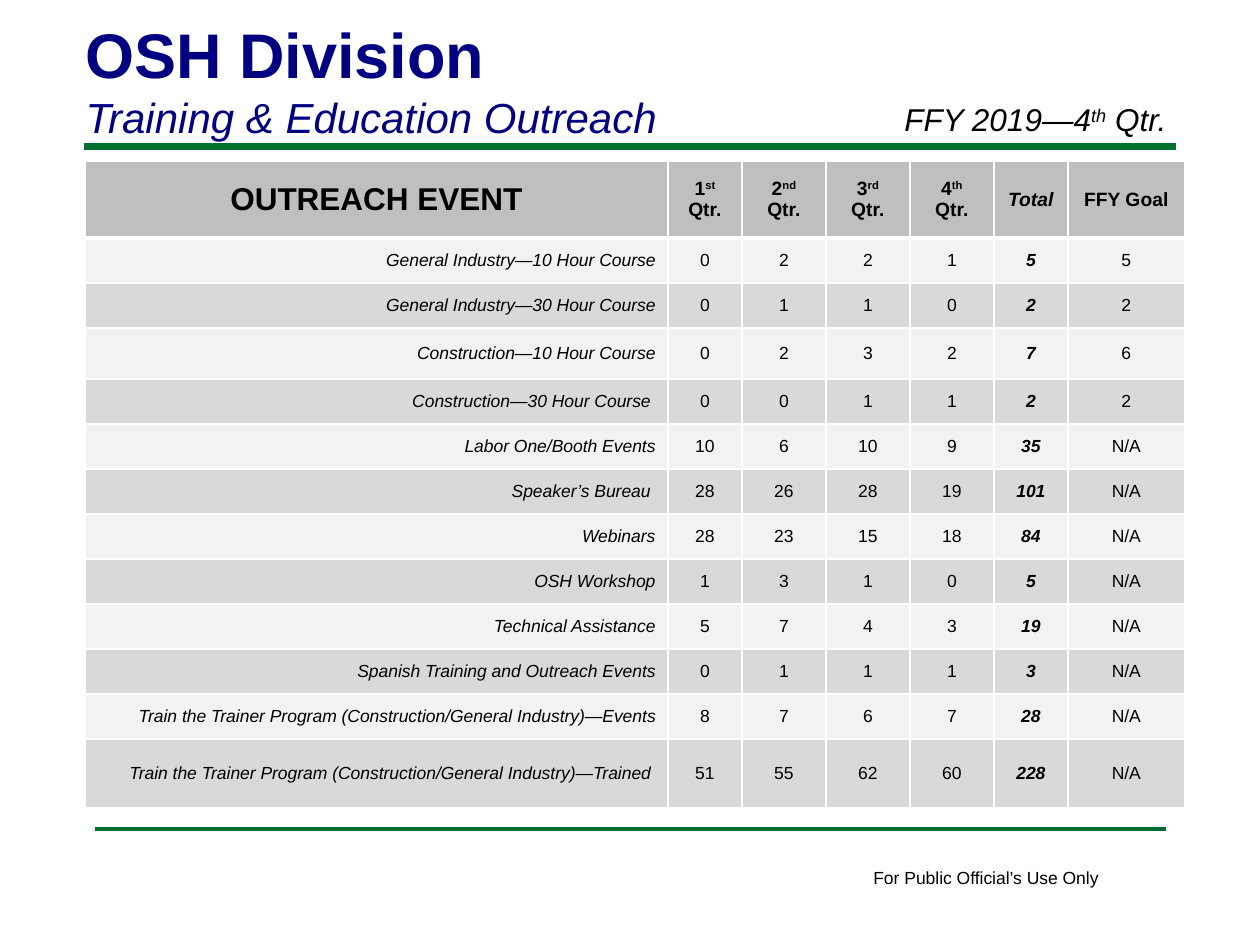
from lxml.etree import SubElement
from pptx import Presentation
from pptx.dml.color import RGBColor
from pptx.enum.shapes import MSO_CONNECTOR
from pptx.enum.text import MSO_ANCHOR, MSO_AUTO_SIZE, PP_ALIGN
from pptx.oxml.ns import qn
from pptx.util import Emu, Pt

GREEN = RGBColor(0x00, 0x70, 0x30)
NAVY = RGBColor(0x00, 0x00, 0x80)
BLACK = RGBColor(0x00, 0x00, 0x00)
WHITE = RGBColor(0xFF, 0xFF, 0xFF)
HEADER_GREY = RGBColor(0xBF, 0xBF, 0xBF)
ROW_GREYS = RGBColor(0xF2, 0xF2, 0xF2), RGBColor(0xD9, 0xD9, 0xD9)

# Each text is a list of (string, is superscript) pairs or a plain string.
HEADERS = ["OUTREACH EVENT"] + [
    [(str(n), False), (suffix, True), (" Qtr.", False)]
    for n, suffix in enumerate(("st", "nd", "rd", "th"), 1)
] + ["Total", "FFY Goal"]
EVENTS = [
    ("General Industry—10 Hour Course", 0, 2, 2, 1, 5, 5),
    ("General Industry—30 Hour Course", 0, 1, 1, 0, 2, 2),
    ("Construction—10 Hour Course", 0, 2, 3, 2, 7, 6),
    ("Construction—30 Hour Course ", 0, 0, 1, 1, 2, 2),
    ("Labor One/Booth Events", 10, 6, 10, 9, 35, "N/A"),
    ("Speaker’s Bureau ", 28, 26, 28, 19, 101, "N/A"),
    ("Webinars", 28, 23, 15, 18, 84, "N/A"),
    ("OSH Workshop", 1, 3, 1, 0, 5, "N/A"),
    ("Technical Assistance", 5, 7, 4, 3, 19, "N/A"),
    ("Spanish Training and Outreach Events", 0, 1, 1, 1, 3, "N/A"),
    ("Train the Trainer Program (Construction/General Industry)—Events",
     8, 7, 6, 7, 28, "N/A"),
    ("Train the Trainer Program (Construction/General Industry)—Trained ",
     51, 55, 62, 60, 228, "N/A"),
]
COL_WIDTHS = [583, 74, 84, 84, 84, 74, 117]
ROW_HEIGHTS = [77, 45, 45, 51] + [45] * 8 + [69]
TOTAL_COL = 5


def px(n):
    return Emu(round(n * 914400 / 126))


def write(p, text, size, align=PP_ALIGN.LEFT, color=BLACK, **fmt):
    p.alignment = align
    parts = [(text, False)] if isinstance(text, str) else text
    values = {"name": "Arial", "size": Pt(size), "bold": False, "italic": False, **fmt}
    for string, raised in parts:
        r = p.add_run()
        r.text = string
        for key, value in values.items():
            setattr(r.font, key, value)
        r.font.color.rgb = color
        if raised:
            r._r.get_or_add_rPr().set("baseline", "30000")


def add_rule(slide, left, right, y, weight):
    line = slide.shapes.add_connector(
        MSO_CONNECTOR.STRAIGHT, px(left), px(y), px(right), px(y))
    line.line.color.rgb = GREEN
    line.line.width = Pt(weight)
    SubElement(line._element.spPr, qn("a:effectLst"))


def add_label(slide, box, text, size, wrap=True, **fmt):
    tf = slide.shapes.add_textbox(*map(px, box)).text_frame
    tf.word_wrap = wrap
    write(tf.paragraphs[0], text, size, **fmt)


def add_heading(slide, left, top, width, height):
    title = slide.shapes.title
    title.left, title.top, title.width, title.height = map(px, (left, top, width, height))
    tf = title.text_frame
    tf.word_wrap = True
    tf.auto_size = MSO_AUTO_SIZE.NONE
    tf.vertical_anchor = MSO_ANCHOR.BOTTOM
    write(tf.paragraphs[0], "OSH Division", 36, color=NAVY, bold=True)
    write(tf.add_paragraph(), "Training & Education Outreach", 24, color=NAVY, italic=True)
    add_label(slide, (left + 819, top + 86, 315, 50),
              [("FFY 2019—4", False), ("th", True), (" Qtr.", False)], 18, italic=True)
    add_rule(slide, left + 11, left + 1103, top + 139, 4)


def set_borders(cell, weights):
    """Add white borders; weights maps L, R, T and B to points."""
    tcPr = cell._tc.get_or_add_tcPr()
    for i, side in enumerate("LRTB"):
        ln = tcPr.makeelement(qn(f"a:ln{side}"), {"w": str(Pt(weights[side]))})
        fill = SubElement(ln, qn("a:solidFill"))
        SubElement(fill, qn("a:srgbClr"), val=str(WHITE))
        tcPr.insert(i, ln)


def cell_format(row, col):
    if row == 0:
        return {"size": 11 if col else 18, "align": PP_ALIGN.CENTER,
                "bold": True, "italic": col == TOTAL_COL}
    return {"size": 10, "align": PP_ALIGN.CENTER if col else PP_ALIGN.RIGHT,
            "bold": col == TOTAL_COL, "italic": col in (0, TOTAL_COL)}


def add_outreach_table(slide, left, top):
    rows = [HEADERS, *EVENTS]
    table = slide.shapes.add_table(
        len(rows), len(COL_WIDTHS), px(left), px(top),
        px(sum(COL_WIDTHS)), px(sum(ROW_HEIGHTS))).table
    table.first_row = table.horz_banding = False
    for column, width in zip(table.columns, COL_WIDTHS):
        column.width = px(width)
    for i, (values, height) in enumerate(zip(rows, ROW_HEIGHTS)):
        table.rows[i].height = px(height)
        for j, value in enumerate(values):
            cell = table.cell(i, j)
            cell.vertical_anchor = MSO_ANCHOR.MIDDLE
            cell.fill.solid()
            cell.fill.fore_color.rgb = ROW_GREYS[(i - 1) % 2] if i else HEADER_GREY
            set_borders(cell, {"L": 1, "R": 1, "T": 3 if i == 1 else 1, "B": 1 if i else 3})
            text = str(value) if isinstance(value, int) else value
            write(cell.text_frame.paragraphs[0], text, **cell_format(i, j))


def add_footer(slide, left, top, width):
    add_rule(slide, left, left + width, top, 2)
    add_label(slide, (left + 766, top + 32, 253, 34),
              "For Public Official’s Use Only", 10, wrap=False)


def main():
    prs = Presentation()
    prs.slide_width, prs.slide_height = px(1260), px(945)
    slide = prs.slides.add_slide(prs.slide_layouts[5])
    add_heading(slide, 73, 8, 1040, 140)
    add_outreach_table(slide, 85, 161)
    add_footer(slide, 95, 829, 1071)
    prs.save("out.pptx")


if __name__ == "__main__":
    main()
